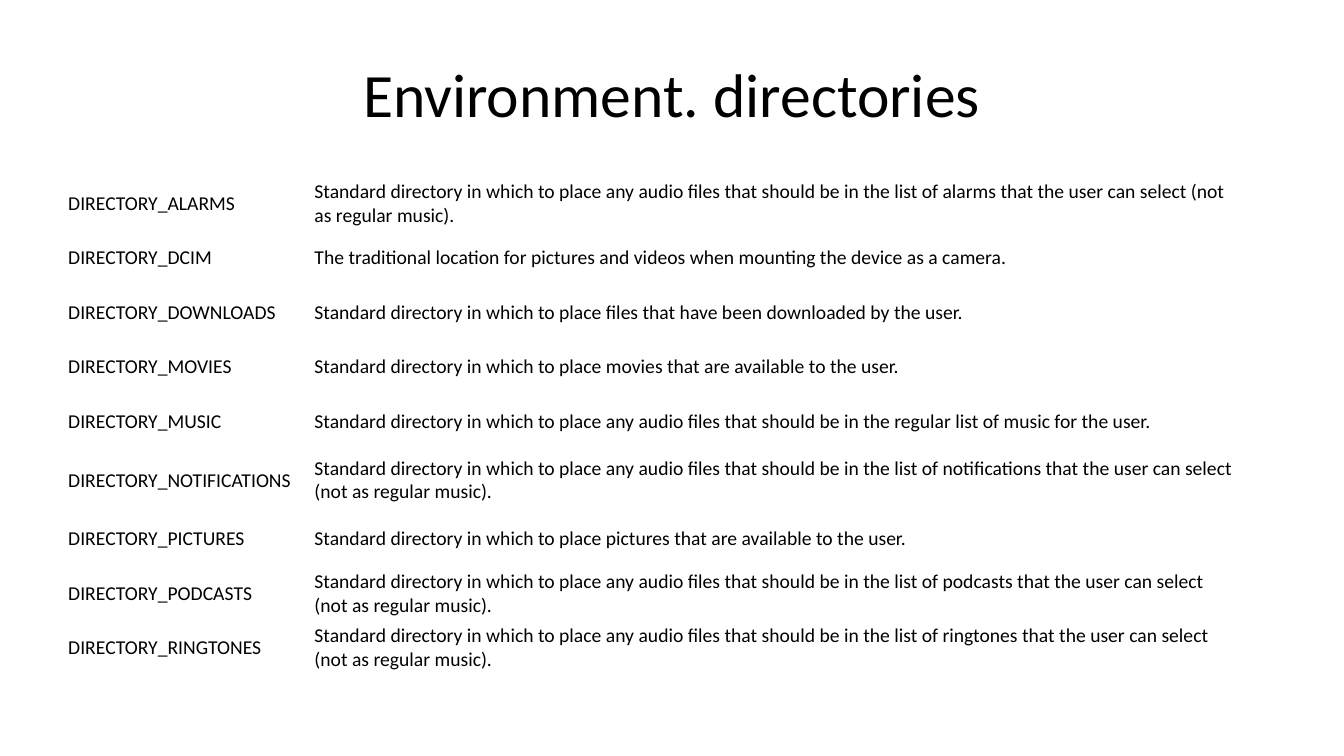
import pptx
import pptx.util
import pptx.dml.color
import pptx.enum.text
from dataclasses import dataclass

Pt = pptx.util.Pt
MIDDLE = pptx.enum.text.MSO_ANCHOR.MIDDLE


@dataclass(frozen=True)
class Theme:
    font: str = "Calibri"
    ink: str = "000000"
    title: float = 44
    body: float = 14


THEME = Theme()
PLACE = "Standard directory in which to place "
AUDIO = PLACE + "any audio files that should be in the "
SELECT = AUDIO + "list of {} that the user can select (not as regular music)."
ROWS = [
    ("ALARMS", SELECT.format("alarms")),
    ("DCIM", "The traditional location for pictures and videos "
             "when mounting the device as a camera."),
    ("DOWNLOADS", PLACE + "files that have been downloaded by the user."),
    ("MOVIES", PLACE + "movies that are available to the user."),
    ("MUSIC", AUDIO + "regular list of music for the user."),
    ("NOTIFICATIONS", SELECT.format("notifications")),
    ("PICTURES", PLACE + "pictures that are available to the user."),
    ("PODCASTS", SELECT.format("podcasts")),
    ("RINGTONES", SELECT.format("ringtones")),
]
TALL = {"NOTIFICATIONS": 44.7}
ROW = 38.96
NAMES = 175.9


def style(para, size):
    para.font.name = THEME.font
    para.font.size = Pt(size)
    para.font.color.rgb = pptx.dml.color.RGBColor.from_string(THEME.ink)


def add_title(slide, box, text):
    frame = slide.shapes.add_textbox(*map(Pt, box)).text_frame
    frame.word_wrap = True
    frame.vertical_anchor = MIDDLE
    para = frame.paragraphs[0]
    para.text = text
    para.alignment = pptx.enum.text.PP_ALIGN.CENTER
    style(para, THEME.title)


def fill_cell(cell, text):
    cell.fill.background()
    cell.vertical_anchor = MIDDLE
    cell.margin_left = cell.margin_right = Pt(0.75)
    cell.margin_top = cell.margin_bottom = Pt(0)
    cell.text = text
    style(cell.text_frame.paragraphs[0], THEME.body)


def add_list(slide, box, rows):
    table = slide.shapes.add_table(len(rows), 2, *map(Pt, box)).table
    table.first_row = False
    table.horz_banding = False
    table.columns[0].width = Pt(NAMES)
    table.columns[1].width = Pt(box[2] - NAMES)
    for i, (name, note) in enumerate(rows):
        table.rows[i].height = Pt(TALL.get(name, ROW))
        fill_cell(table.cell(i, 0), "DIRECTORY_" + name)
        fill_cell(table.cell(i, 1), note)


def main():
    deck = pptx.Presentation()
    deck.slide_width = Pt(960)
    deck.slide_height = Pt(540)
    slide = deck.slides.add_slide(deck.slide_layouts[6])
    add_title(slide, (48, 21.6, 864, 90), "Environment. directories")
    add_list(slide, (48, 126, 840, 356.4), ROWS)
    deck.save("out.pptx")


if __name__ == "__main__":
    main()
